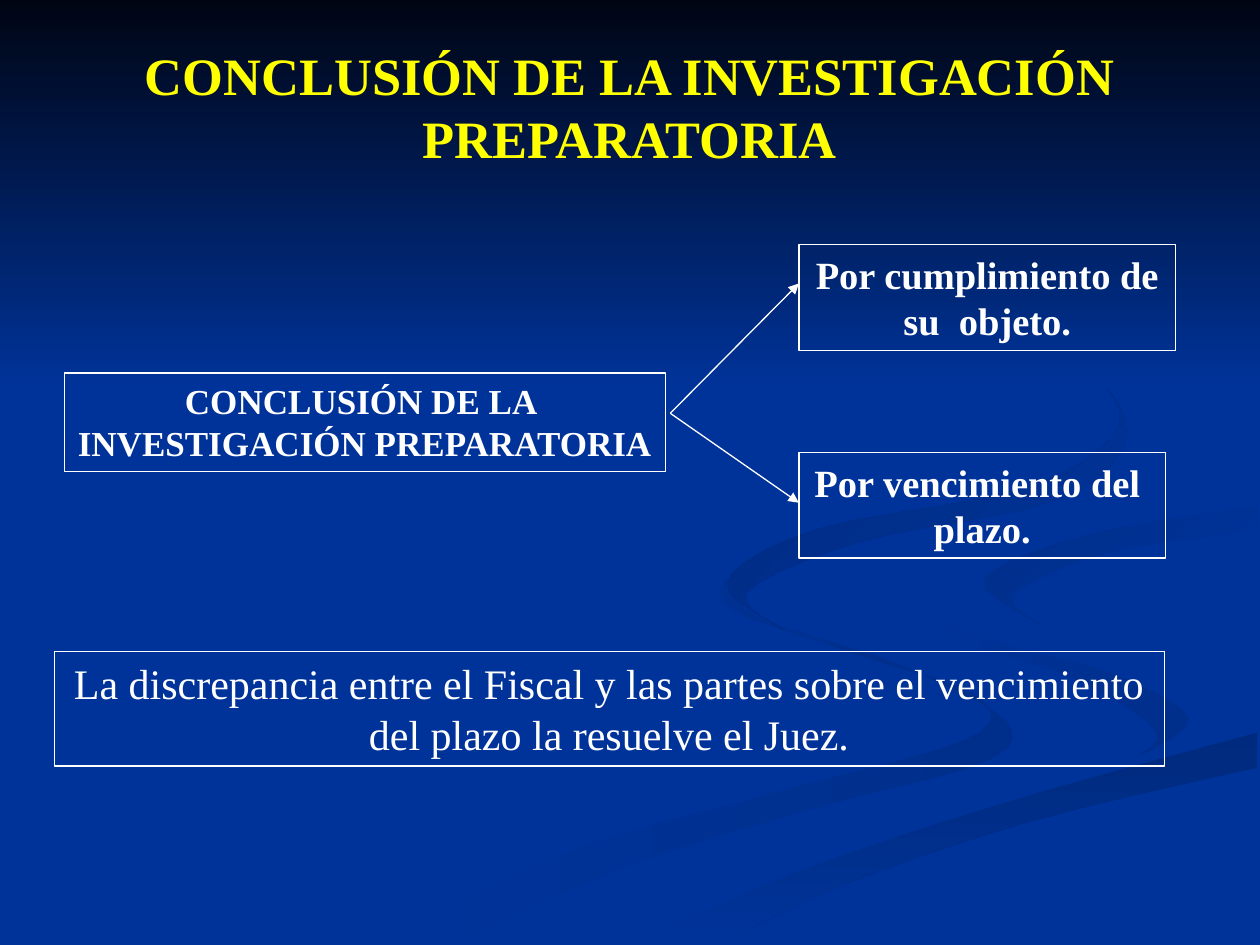
from dataclasses import dataclass

from lxml.etree import SubElement
from pptx import Presentation
from pptx.dml.color import RGBColor
from pptx.enum.shapes import MSO_CONNECTOR, MSO_SHAPE
from pptx.enum.text import MSO_ANCHOR, PP_ALIGN
from pptx.oxml.ns import qn
from pptx.util import Inches, Pt

FONT = "Times New Roman"
BLUE = RGBColor(0x00, 0x33, 0x99)
NIGHT = RGBColor(0x00, 0x05, 0x14)
DEEP = RGBColor(0x00, 0x2E, 0x8B)
DUSK = RGBColor(0x00, 0x2A, 0x7D)
WHITE = RGBColor(0xFF, 0xFF, 0xFF)
YELLOW = RGBColor(0xFF, 0xFF, 0x00)
STEPS = 5

Point = tuple[float, float]


@dataclass
class Box:
    left: float
    top: float
    width: float
    height: float
    lines: list[str]
    size: int
    bold: bool = True


@dataclass
class Swirl:
    start: RGBColor
    end: RGBColor
    angle: int
    edges: list[list[Point]]


SWIRLS = [
    Swirl(BLUE, DEEP, 0, [
        [(5.75, 4.59), (5.81, 4.84), (6.79, 5.19), (7.76, 5.53),
         (7.67, 5.87), (6.16, 6.29), (4.58, 6.74), (3, 7.49)],
        [(3.61, 7.49), (4.99, 6.87), (6.51, 6.4), (7.8, 6.05),
         (7.99, 5.73), (7.15, 5.28), (6.02, 4.9), (5.75, 4.59)]]),
    Swirl(BLUE, DEEP, 45, [
        [(7.24, 4.64), (7.55, 5.05), (8.54, 5.39), (9.18, 5.81), (8.94, 6.05)],
        [(8.94, 6.05), (9.43, 5.7), (8.7, 5.3), (7.58, 4.98), (7.24, 4.64)]]),
    Swirl(DUSK, BLUE, 90, [
        [(5.03, 7.49), (6.3, 6.93), (7.97, 6.37), (9.98, 5.81)],
        [(9.98, 6.09), (8.21, 6.51), (6.7, 7.02), (5.71, 7.49)]]),
    Swirl(BLUE, BLUE, 0, [
        [(9.99, 3.87), (8.3, 4.15), (7.25, 4.64), (7.93, 5.09),
         (9.05, 5.4), (9.36, 5.87), (7.43, 6.43), (4.77, 7.49)],
        [(5.03, 7.49), (6.3, 6.93), (7.97, 6.37), (9.99, 5.81)],
        [(9.99, 5.38), (8.48, 5.03), (7.81, 4.63), (8.5, 4.27), (9.99, 4.02)]]),
    Swirl(DEEP, BLUE, 45, [
        [(9.98, 4.02), (8.65, 4.24), (7.81, 4.6), (8.26, 4.96)],
        [(8.26, 4.96), (8.05, 4.72), (8.78, 4.39), (9.98, 4.2)]]),
    Swirl(DUSK, BLUE, 45, [
        [(7.62, 2.33), (8.54, 2.83), (8.94, 3.44), (8.41, 3.96),
         (6.83, 4.3), (5.93, 4.7), (6.22, 5)],
        [(6.22, 5), (5.77, 4.62), (6.49, 4.2), (8.18, 3.86),
         (8.89, 3.35), (8.46, 2.79), (7.62, 2.33)]]),
    Swirl(NIGHT, BLUE, 90, [[(0, 0), (10, 0)], [(10, 3.08), (0, 3.08)]]),
]

BOXES = [
    Box(6.34, 1.94, 2.99, 0.84, ["Por cumplimiento de su  objeto."], 22),
    Box(0.51, 2.96, 4.77, 0.78,
        ["CONCLUSIÓN DE LA ", "INVESTIGACIÓN PREPARATORIA"], 20),
    Box(0.43, 5.17, 8.81, 0.91,
        ["La discrepancia entre el Fiscal y las partes sobre el vencimiento "
         "del plazo la resuelve el Juez."], 24, False),
    Box(6.34, 3.59, 2.91, 0.84, ["Por vencimiento del  plazo."], 22),
]
FORK = (5.32, 3.28)
TIPS = [(6.34, 2.25), (6.34, 3.99)]


def write(shape, lines: list[str], *, size: int, bold: bool = True,
          color: RGBColor = WHITE, anchor=MSO_ANCHOR.TOP) -> None:
    frame = shape.text_frame
    frame.word_wrap = True
    frame.vertical_anchor = anchor
    frame.text = "\n".join(lines)
    for para in frame.paragraphs:
        para.alignment = PP_ALIGN.CENTER
        font = para.runs[0].font
        font.name, font.size, font.bold = FONT, Pt(size), bold
        font.color.rgb = color


def blend(a: float, b: float, c: float, d: float, t: float) -> float:
    return b + t / 2 * (c - a + t * (2 * a - 5 * b + 4 * c - d
                                     + t * (3 * (b - c) + d - a)))


def smooth(edge: list[Point]) -> list[Point]:
    if len(edge) == 2:
        return edge
    knots = [edge[0], *edge, edge[-1]]
    curve = [tuple(blend(*axis, step / STEPS) for axis in zip(*part))
             for part in zip(knots, knots[1:], knots[2:], knots[3:])
             for step in range(STEPS)]
    return curve + [edge[-1]]


def draw_swirl(slide, swirl: Swirl) -> None:
    first, *rest = [(Inches(x), Inches(y))
                    for edge in swirl.edges for x, y in smooth(edge)]
    pen = slide.shapes.build_freeform(*first)
    pen.add_line_segments(rest, close=True)
    shape = pen.convert_to_shape()
    shape.shadow.inherit = False
    shape.line.fill.background()
    if swirl.start == swirl.end:
        shape.fill.solid()
        shape.fill.fore_color.rgb = swirl.start
        return
    shape.fill.gradient()
    shape.fill.gradient_angle = (360 - swirl.angle) % 360
    for stop, color in zip(shape.fill.gradient_stops, (swirl.start, swirl.end)):
        stop.color.rgb = color


def draw_box(slide, box: Box) -> None:
    place = map(Inches, (box.left, box.top, box.width, box.height))
    shape = slide.shapes.add_shape(MSO_SHAPE.RECTANGLE, *place)
    shape.shadow.inherit = False
    shape.fill.background()
    shape.line.color.rgb = WHITE
    shape.line.width = Pt(0.75)
    write(shape, box.lines, size=box.size, bold=box.bold)


def draw_arrow(slide, start: Point, end: Point) -> None:
    ends = map(Inches, start + end)
    arrow = slide.shapes.add_connector(MSO_CONNECTOR.STRAIGHT, *ends)
    arrow.line.color.rgb = WHITE
    arrow.line.width = Pt(0.75)
    props = arrow._element.spPr
    SubElement(props.find(qn("a:ln")), qn("a:tailEnd"), type="triangle")
    SubElement(props, qn("a:effectLst"))


def main() -> None:
    deck = Presentation()
    deck.slide_width, deck.slide_height = Inches(10), Inches(7.5)
    slide = deck.slides.add_slide(deck.slide_layouts[6])
    slide.background.fill.solid()
    slide.background.fill.fore_color.rgb = BLUE
    for swirl in SWIRLS:
        draw_swirl(slide, swirl)
    title = slide.shapes.add_textbox(0, Inches(0.3), Inches(10), Inches(1.09))
    write(title, ["CONCLUSIÓN DE LA INVESTIGACIÓN PREPARATORIA"], size=30,
          color=YELLOW, anchor=MSO_ANCHOR.MIDDLE)
    for box in BOXES:
        draw_box(slide, box)
    for tip in TIPS:
        draw_arrow(slide, FORK, tip)
    deck.save("out.pptx")


if __name__ == "__main__":
    main()
